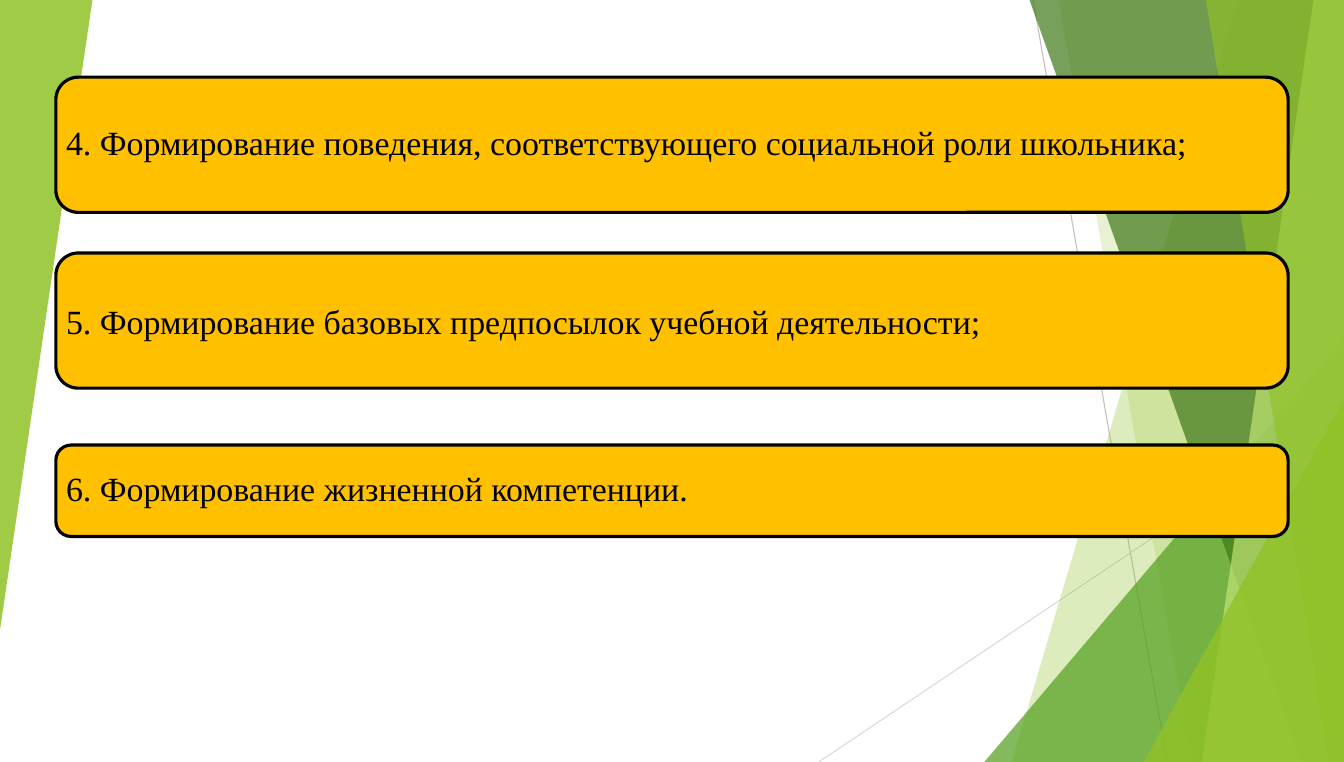
from lxml.etree import SubElement
from pptx import Presentation
from pptx.dml.color import RGBColor
from pptx.enum.shapes import MSO_CONNECTOR as Connector, MSO_SHAPE as Shape
from pptx.enum.text import MSO_ANCHOR as Anchor, PP_ALIGN as Align
from pptx.oxml.ns import qn
from pptx.util import Pt

WIDTH, HEIGHT = 952.56, 540
GREEN = "90C226"
GOALS = [
    # top, height, line spacing, text
    (54.7, 95.8, 0.9, "4. Формирование поведения, соответствующего социальной роли школьника;"),
    (179.3, 95.8, 1.0, "5. Формирование базовых предпосылок учебной деятельности;"),
    (315.4, 64.8, 0.9, "6. Формирование жизненной компетенции."),
]


def color(hex_string):
    return RGBColor.from_string(hex_string)


def fill_shape(shape, fill, opacity=100):
    shape.shadow.inherit = False
    shape.fill.solid()
    shape.fill.fore_color.rgb = color(fill)
    if opacity < 100:
        solid = shape._element.spPr.find(qn("a:solidFill"))
        SubElement(solid[0], qn("a:alpha"), val=str(opacity * 1000))


def add_line(slide, start, end, line_color):
    line = slide.shapes.add_connector(
        Connector.STRAIGHT, *(Pt(value) for value in start + end))
    line.line.color.rgb = color(line_color)
    line.line.width = Pt(0.75)
    SubElement(line._element.spPr, qn("a:effectLst"))


def add_band(slide, top_x, bottom_x, fill, opacity):
    """Fill from a slanted left edge to the right side of the slide."""
    builder = slide.shapes.build_freeform(Pt(top_x), Pt(-0.7), scale=1.0)
    corners = [(WIDTH, -0.7), (WIDTH, HEIGHT), (bottom_x, HEIGHT)]
    builder.add_line_segments([(Pt(x), Pt(y)) for x, y in corners], close=True)
    band = builder.convert_to_shape()
    fill_shape(band, fill, opacity)
    band.line.fill.background()


def add_triangle(slide, left, top, width, height, fill, opacity, rotation=0):
    triangle = slide.shapes.add_shape(
        Shape.ISOSCELES_TRIANGLE, Pt(left), Pt(top), Pt(width), Pt(height))
    triangle.adjustments[0] = 1
    triangle.rotation = rotation
    fill_shape(triangle, fill, opacity)
    triangle.line.fill.background()


def write_text(shape, text, *, size, font, font_color, line_spacing, inset):
    frame = shape.text_frame
    frame.word_wrap = True
    frame.vertical_anchor = Anchor.MIDDLE
    frame.margin_left = frame.margin_right = Pt(inset)
    frame.margin_top = frame.margin_bottom = Pt(inset)
    paragraph = frame.paragraphs[0]
    paragraph.alignment = Align.LEFT
    paragraph.line_spacing = line_spacing
    run = paragraph.add_run()
    run.text = text
    run.font.size = Pt(size)
    run.font.name = font
    run.font.color.rgb = color(font_color)


def add_goal(slide, top, height, line_spacing, text):
    box = slide.shapes.add_shape(
        Shape.ROUNDED_RECTANGLE, Pt(39.6), Pt(top), Pt(873.4), Pt(height))
    fill_shape(box, "FFC000")
    box.line.color.rgb = color("000000")
    box.line.width = Pt(2.25)
    # The rounded corners already push the text in by 0.29 of their radius.
    write_text(box, text, size=24, font="Times New Roman", font_color="000000",
               line_spacing=line_spacing, inset=7.2 - 0.29 * height / 6)


def add_background(slide):
    add_line(slide, (732.2, 0), (827.3, HEIGHT), "BFBFBF")
    add_line(slide, (WIDTH, 290.2), (580.3, HEIGHT), "D9D9D9")
    add_band(slide, 877, 717.1, GREEN, 30)
    add_band(slide, 750.2, 844.6, GREEN, 20)
    add_triangle(slide, 697.7, 239.8, 254.9, 300.2, "54A021", 72)
    add_band(slide, 729.4, 922.3, "3F7819", 70)
    add_band(slide, 931, 851.8, "C0E474", 70)
    add_band(slide, 854.6, 941.8, GREEN, 65)
    add_triangle(slide, 810.7, 283, 141.8, 257, GREEN, 80)
    add_triangle(slide, 0, 0, 65.5, 446.4, GREEN, 85, rotation=180)


def main():
    presentation = Presentation()
    presentation.slide_width, presentation.slide_height = Pt(WIDTH), Pt(HEIGHT)
    slide = presentation.slides.add_slide(presentation.slide_layouts[6])
    add_background(slide)
    for goal in GOALS:
        add_goal(slide, *goal)
    presentation.save("out.pptx")


if __name__ == "__main__":
    main()
